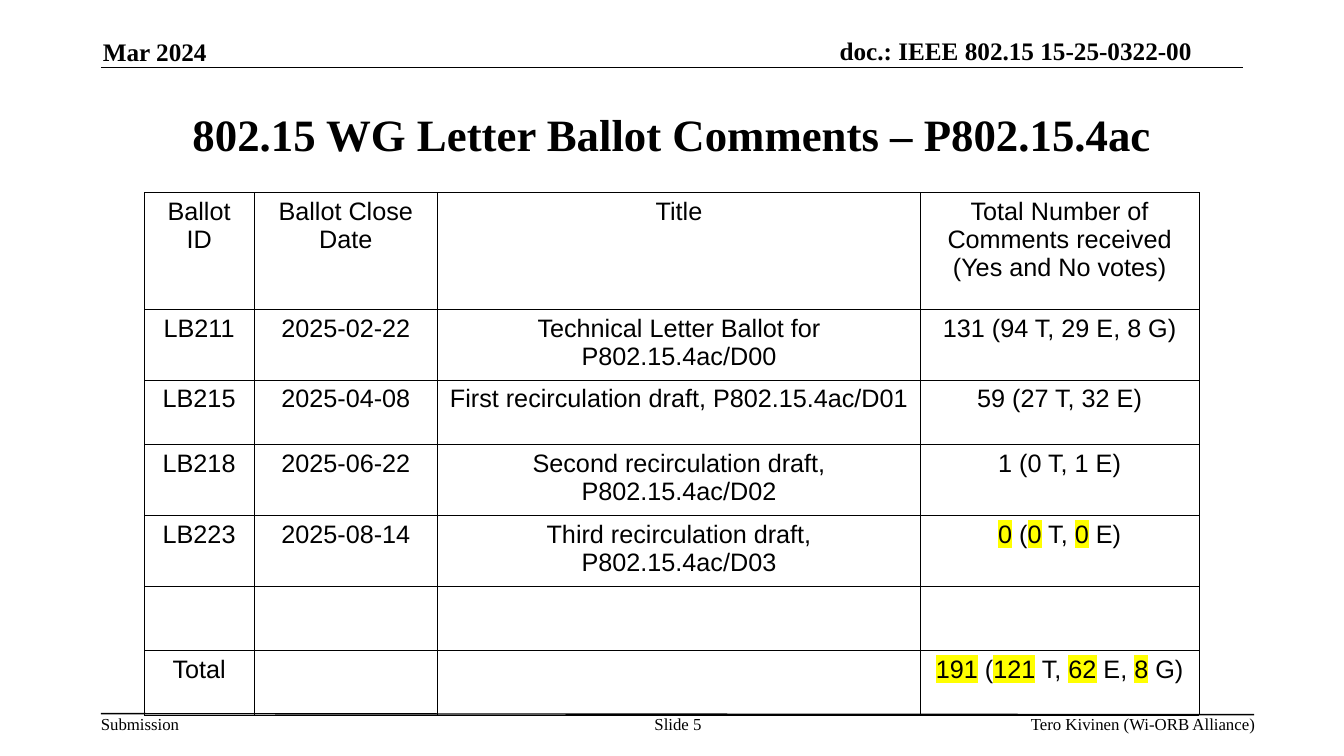
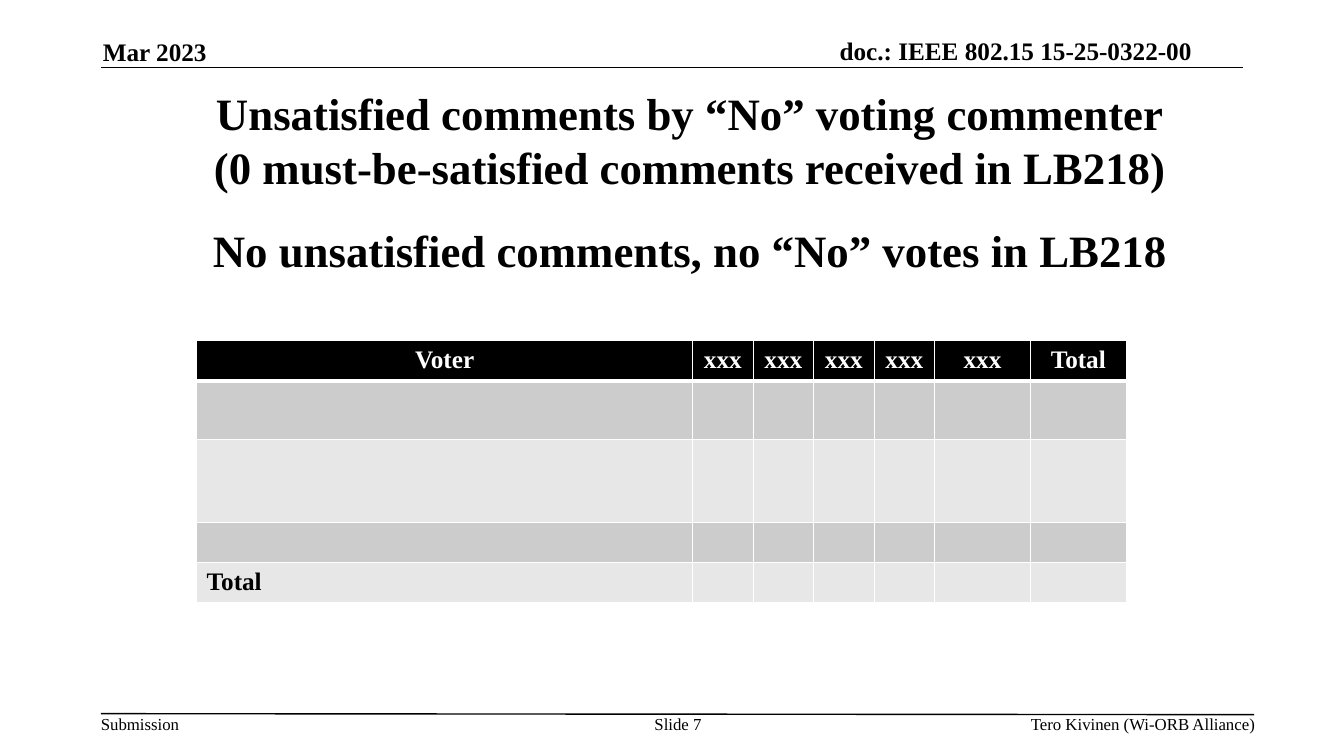
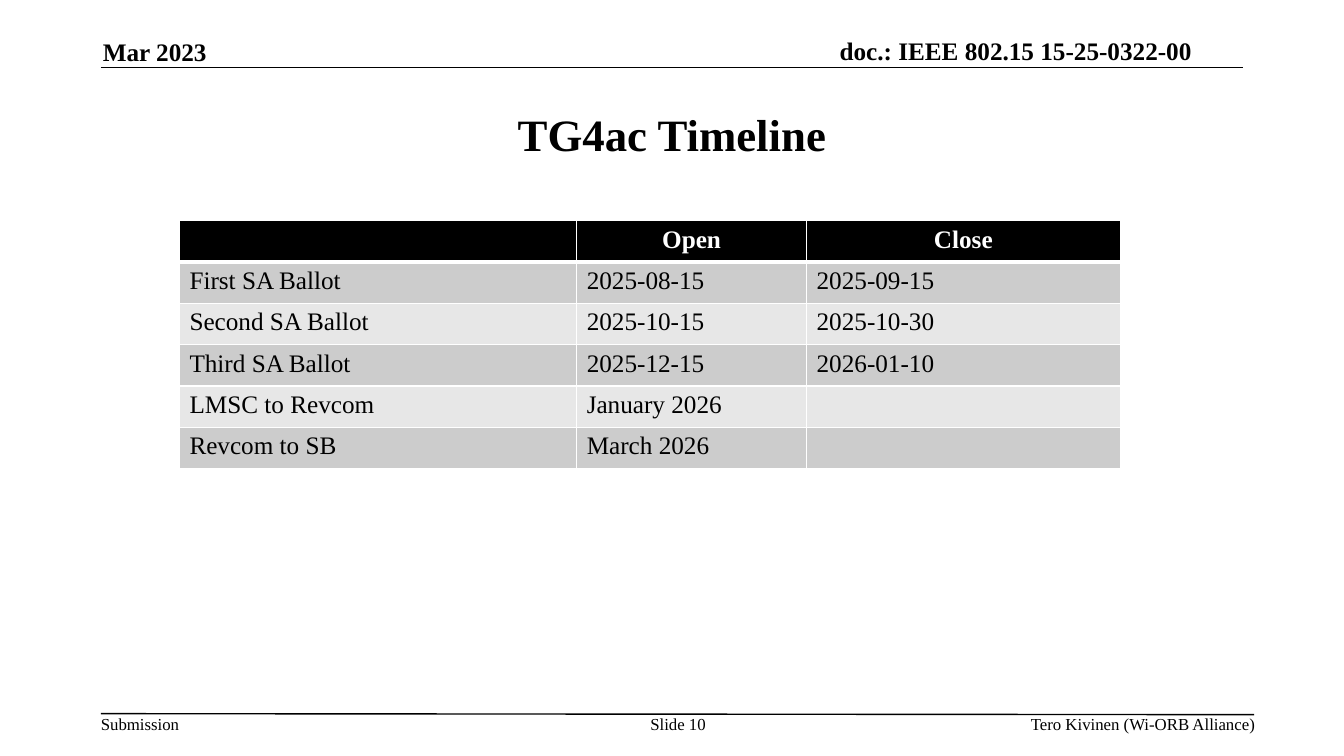
from dataclasses import dataclass
from itertools import groupby

from lxml import etree
from pptx import Presentation
from pptx.dml.color import RGBColor
from pptx.enum.shapes import MSO_CONNECTOR
from pptx.enum.text import MSO_ANCHOR, MSO_AUTO_SIZE, PP_ALIGN
from pptx.oxml.ns import qn
from pptx.util import Inches, Pt

LEFT, MID, RIGHT = PP_ALIGN.LEFT, PP_ALIGN.CENTER, PP_ALIGN.RIGHT
TOP, MIDDLE, BOTTOM = MSO_ANCHOR.TOP, MSO_ANCHOR.MIDDLE, MSO_ANCHOR.BOTTOM
STRAIGHT = MSO_CONNECTOR.STRAIGHT
NO_FIT = MSO_AUTO_SIZE.NONE

COLORS = {
    "ink": "000000",
    "paper": "FFFFFF",
    "dark": "CCCCCC",
    "light": "E7E7E7",
    "mark": "FFFF00",
}
SERIF, SANS = "Times New Roman", "Arial"
TITLE_GAP = Pt(21)
THIN, THICK, HAIR = 0.96, 3, 0.06

Box = tuple[float, float, float, float]


@dataclass
class Grid:
    left: float
    top: float
    cols: list[float]
    rows: list[float]
    cells: list[list[str]]
    banded: bool = True
    bold: bool = False
    marked: tuple[int, ...] = ()


@dataclass
class Page:
    title: list[str]
    date: str
    number: int
    grid: Grid
    box: Box = (1, 0.75, 11.33, 1.16)


@dataclass
class Label:
    text: str
    box: Box
    size: int = 12
    align: PP_ALIGN = LEFT
    anchor: MSO_ANCHOR = TOP
    bold: bool = False


PAGES = [
    Page(
        ["802.15 WG Letter Ballot Comments – P802.15.4ac"], "Mar 2024", 5,
        Grid(
            1.43, 1.91, [1.09, 1.82, 4.79, 2.76], [1.16] + [0.64] * 6,
            [
                ["Ballot ID", "Ballot Close Date", "Title",
                 "Total Number of Comments received (Yes and No votes)"],
                ["LB211", "2025-02-22",
                 "Technical Letter Ballot for P802.15.4ac/D00",
                 "131 (94 T, 29 E, 8 G)"],
                ["LB215", "2025-04-08",
                 "First recirculation draft, P802.15.4ac/D01",
                 "59 (27 T, 32 E)"],
                ["LB218", "2025-06-22",
                 "Second recirculation draft, P802.15.4ac/D02",
                 "1 (0 T, 1 E)"],
                ["LB223", "2025-08-14",
                 "Third recirculation draft, P802.15.4ac/D03",
                 "0 (0 T, 0 E)"],
                [""] * 4,
                ["Total", "", "", "191 (121 T, 62 E, 8 G)"],
            ],
            banded=False, marked=(4, 6),
        ),
    ),
    Page(
        ["Unsatisfied comments by “No” voting commenter",
         "(0 must-be-satisfied comments received in LB218)",
         "No unsatisfied comments, no “No” votes in LB218"],
        "Mar 2023", 7,
        Grid(
            1.95, 3.38, [4.92] + [0.6] * 4 + [0.95] * 2,
            [0.38, 0.58, 0.82, 0.38, 0.38],
            [["Voter"] + ["xxx"] * 5 + ["Total"]]
            + [[""] * 7] * 3 + [["Total"] + [""] * 6],
            bold=True,
        ),
        (1.02, 0.7, 11.65, 2.2),
    ),
    Page(
        ["TG4ac Timeline"], "Mar 2023", 10,
        Grid(
            1.78, 2.19, [3.94, 2.28, 3.11], [0.41] * 6,
            [
                ["", "Open", "Close"],
                ["First SA Ballot", "2025-08-15", "2025-09-15"],
                ["Second SA Ballot", "2025-10-15", "2025-10-30"],
                ["Third SA Ballot", "2025-12-15", "2026-01-10"],
                ["LMSC to Revcom", "January 2026", ""],
                ["Revcom to SB", "March 2026", ""],
            ],
        ),
    ),
]


def rgb(name: str) -> RGBColor:
    return RGBColor.from_string(COLORS[name])


def style(para, size: int, align: PP_ALIGN, bold: bool,
          face: str = SERIF, color: str = "ink") -> None:
    para.alignment = align
    for run in para.runs:
        font = run.font
        font.name, font.size, font.bold = face, Pt(size), bold
        font.color.rgb = rgb(color)


def add_rule(slide, x: float, y: float, right: float, end: float) -> None:
    rule = slide.shapes.add_connector(
        STRAIGHT, Inches(x), Inches(y), Inches(right), Inches(end))
    rule.line.color.rgb = rgb("ink")
    rule.line.width = Pt(1)
    etree.SubElement(rule._element.spPr, qn("a:effectLst"))


def add_label(slide, label: Label) -> None:
    frame = slide.shapes.add_textbox(*map(Inches, label.box)).text_frame
    frame.word_wrap = True
    frame.vertical_anchor = label.anchor
    frame.margin_left = frame.margin_right = 0
    frame.margin_top = frame.margin_bottom = 0
    frame.text = label.text
    style(frame.paragraphs[0], label.size, label.align, label.bold)


def set_title(slide, lines: list[str], box: Box) -> None:
    """Fill the title; a last line after others stands apart."""
    title = slide.shapes.title
    title.left, title.top, title.width, title.height = map(Inches, box)
    frame = title.text_frame
    frame.text = "\n".join(lines)
    frame.auto_size = NO_FIT
    frame.word_wrap = True
    frame.vertical_anchor = MIDDLE
    for para in frame.paragraphs:
        style(para, 32, MID, True)
    if len(lines) > 1:
        frame.paragraphs[-1].space_before = TITLE_GAP


def add_frame(slide, page: Page) -> None:
    """Draw the header and footer that all slides share."""
    add_rule(slide, 1, 0.67, 12.33, 0.67)
    add_rule(slide, 1, 7.08, 12.44, 7.09)
    for label in (
        Label("Submission", (1, 7.08, 1, 0.2)),
        Label("doc.: IEEE 802.15 15-25-0322-00", (6.72, 0.35, 5.1, 0.3),
              18, RIGHT, BOTTOM, True),
        Label(page.date, (1.02, 0.36, 2.73, 0.3), 18, LEFT, BOTTOM, True),
        Label("Tero Kivinen (Wi-ORB Alliance)", (7.81, 7.08, 4.64, 0.19),
              align=RIGHT),
        Label(f"Slide {page.number}", (6.34, 7.08, 0.77, 0.39), align=MID),
    ):
        add_label(slide, label)


def set_edges(cell, color: str, widths: dict[str, float]) -> None:
    props = cell._tc.get_or_add_tcPr()
    for side, width in widths.items():
        edge = etree.SubElement(props, qn(f"a:ln{side}"), w=str(Pt(width)))
        fill = etree.SubElement(edge, qn("a:solidFill"))
        etree.SubElement(fill, qn("a:srgbClr"), val=COLORS[color])


def mark(run) -> None:
    """Highlight a run; the tag must follow its fill."""
    light = etree.Element(qn("a:highlight"))
    etree.SubElement(light, qn("a:srgbClr"), val=COLORS["mark"])
    run._r.rPr.find(qn("a:solidFill")).addnext(light)


def fill_cell(cell, grid: Grid, row: int, col: int) -> None:
    text = grid.cells[row][col]
    para = cell.text_frame.paragraphs[0]
    head = row == 0
    if grid.banded:
        top = THICK if row == 1 else THIN
        low = THICK if head else THIN
        set_edges(cell, "paper", {"L": THIN, "R": THIN, "T": top, "B": low})
        band = "dark" if row % 2 else "light"
        cell.fill.solid()
        cell.fill.fore_color.rgb = rgb("ink" if head else band)
        para.text = text
        style(para, 18, MID if head else LEFT, head or grid.bold,
              color="paper" if head else "ink")
        return
    set_edges(cell, "ink", dict.fromkeys("LRTB", HAIR))
    cell.fill.background()
    marked = row in grid.marked and col == len(grid.cols) - 1
    if marked:
        for _, part in groupby(text, str.isdigit):
            para.add_run().text = "".join(part)
    else:
        para.text = text
    style(para, 18, MID, False, SANS)
    if marked:
        for run in para.runs:
            if run.text.isdigit():
                mark(run)


def add_grid(slide, grid: Grid) -> None:
    table = slide.shapes.add_table(
        len(grid.rows), len(grid.cols), Inches(grid.left), Inches(grid.top),
        Inches(sum(grid.cols)), Inches(sum(grid.rows))).table
    table.first_row = table.horz_banding = False
    for col, width in zip(table.columns, grid.cols):
        col.width = Inches(width)
    for row, height in zip(table.rows, grid.rows):
        row.height = Inches(height)
    for row in range(len(grid.rows)):
        for col in range(len(grid.cols)):
            fill_cell(table.cell(row, col), grid, row, col)


def main() -> None:
    deck = Presentation()
    deck.slide_width, deck.slide_height = Inches(13.33), Inches(7.5)
    layout = deck.slide_layouts.get_by_name("Title Only")
    for page in PAGES:
        slide = deck.slides.add_slide(layout)
        set_title(slide, page.title, page.box)
        add_frame(slide, page)
        add_grid(slide, page.grid)
    deck.save("out.pptx")


if __name__ == "__main__":
    main()
